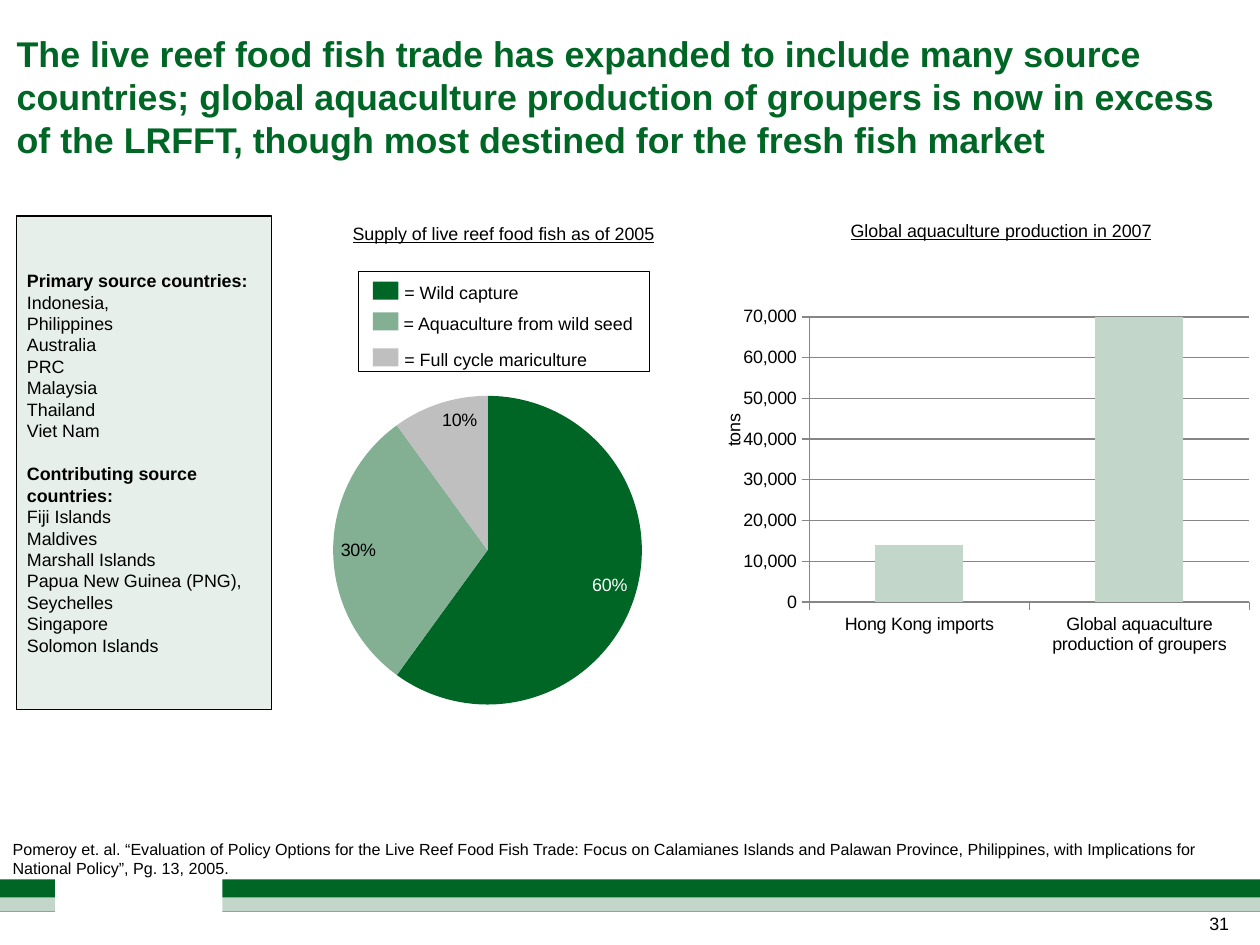
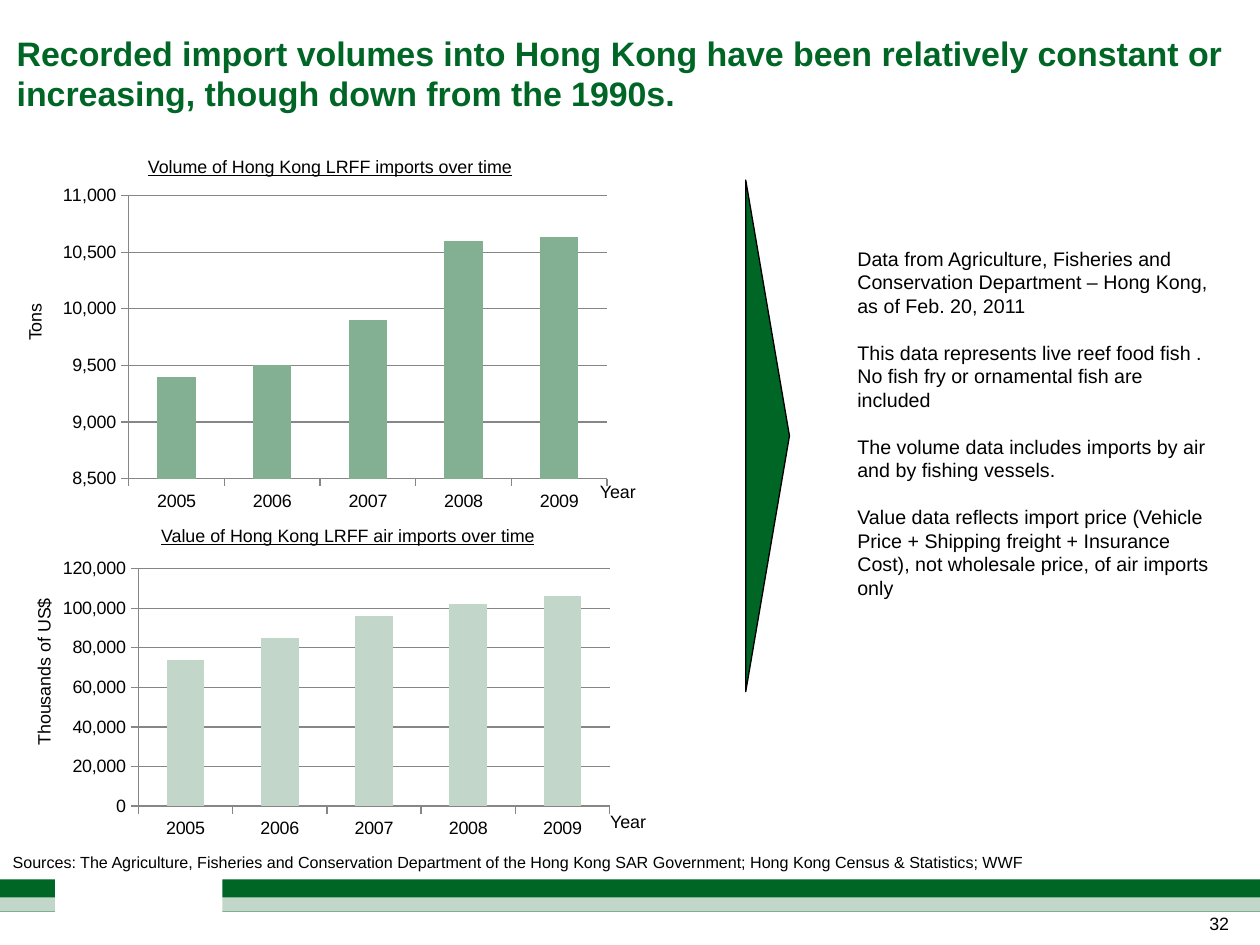
from dataclasses import dataclass

from lxml import etree
from pptx import Presentation
from pptx.chart.data import CategoryChartData
from pptx.dml.color import RGBColor
from pptx.enum.chart import XL_CHART_TYPE, XL_LABEL_POSITION, XL_TICK_MARK
from pptx.enum.shapes import MSO_SHAPE
from pptx.enum.text import MSO_ANCHOR, PP_ALIGN
from pptx.oxml.ns import qn
from pptx.util import Inches, Pt

COLUMN, PIE = XL_CHART_TYPE.COLUMN_CLUSTERED, XL_CHART_TYPE.PIE
INSIDE_END = XL_LABEL_POSITION.INSIDE_END
TICK_CROSS, TICK_NONE = XL_TICK_MARK.CROSS, XL_TICK_MARK.NONE
TICK_OUT = XL_TICK_MARK.OUTSIDE
RECTANGLE, TRIANGLE = MSO_SHAPE.RECTANGLE, MSO_SHAPE.ISOSCELES_TRIANGLE
LEFT, CENTER, RIGHT = PP_ALIGN.LEFT, PP_ALIGN.CENTER, PP_ALIGN.RIGHT
TOP, MIDDLE = MSO_ANCHOR.TOP, MSO_ANCHOR.MIDDLE

DARK_GREEN = RGBColor(0x00, 0x66, 0x25)
MID_GREEN = RGBColor(0x83, 0xAF, 0x93)
LIGHT_GREEN = RGBColor(0xC2, 0xD7, 0xCA)
PALE_GREEN = RGBColor(0xE6, 0xEF, 0xE9)
GRAY = RGBColor(0xBF, 0xBF, 0xBF)
AXIS_GRAY = RGBColor(0x86, 0x86, 0x86)
BLACK = RGBColor(0, 0, 0)
WHITE = RGBColor(0xFF, 0xFF, 0xFF)

FONT = "Arial"
SLIDE_WIDTH, SLIDE_HEIGHT = 9.8, 7.35


@dataclass(frozen=True)
class Box:
    """Place on the slide, in inches."""
    left: float
    top: float
    width: float
    height: float

    def lengths(self) -> tuple:
        return tuple(Inches(v) for v in (self.left, self.top, self.width, self.height))


@dataclass(frozen=True)
class Para:
    text: str
    bold: bool = False
    space_before: float = 0


@dataclass(frozen=True)
class SupplyShare:
    label: str
    share: float
    color: RGBColor
    label_color: RGBColor
    legend_top: float
    legend_width: float


@dataclass(frozen=True)
class ColumnChart:
    box: Box
    name: str
    values: dict[str, float]
    color: RGBColor
    minimum: float
    maximum: float
    step: float


@dataclass(frozen=True)
class Caption:
    text: str
    box: Box
    underline: bool = False
    rotation: float = 0


SHARES = (
    SupplyShare("Wild capture", 0.6, DARK_GREEN, WHITE, 2.14, 1.16),
    SupplyShare("Aquaculture from wild seed", 0.3, MID_GREEN, BLACK, 2.38, 2.04),
    SupplyShare("Full cycle mariculture", 0.1, GRAY, BLACK, 2.66, 1.69),
)
PRODUCTION = ColumnChart(
    Box(5.7, 2.33, 4.1, 2.82), "Production in 2007",
    {"Hong Kong imports": 14000, "Global aquaculture production of groupers": 70000},
    LIGHT_GREEN, 0, 70000, 10000)
IMPORT_VALUE = ColumnChart(
    Box(0.4, 4.3, 4.43, 2.27), "Import value",
    {"2005": 74000, "2006": 85000, "2007": 96000, "2008": 102000, "2009": 106000},
    LIGHT_GREEN, 0, 120000, 20000)
IMPORT_VOLUME = ColumnChart(
    Box(0.4, 1.39, 4.41, 2.64), "Import volume",
    {"2005": 9400, "2006": 9500, "2007": 9900, "2008": 10600, "2009": 10630},
    MID_GREEN, 8500, 11000, 500)
SUPPLY_CAPTIONS = (
    Caption("Supply of live reef food fish as of 2005", Box(2.23, 1.68, 3.37, 0.27), True),
    Caption("Global aquaculture production in 2007", Box(5.98, 1.66, 3.61, 0.27), True),
    Caption("tons", Box(4.78, 3.21, 1.85, 0.27), rotation=270),
)
IMPORT_CAPTIONS = (
    Caption("Tons", Box(-0.73, 2.37, 2, 0.27), rotation=270),
    Caption("Volume of Hong Kong LRFF imports over time", Box(0.52, 1.16, 4.09, 0.27), True),
    Caption("Year", Box(4.4, 3.69, 0.81, 0.27)),
    Caption("Thousands of US$", Box(-0.54, 5.09, 1.76, 0.27), rotation=270),
    Caption("Year", Box(4.47, 6.26, 0.83, 0.27)),
    Caption("Value of Hong Kong LRFF air imports over time", Box(0.61, 4.03, 4.19, 0.27), True),
)
PRIMARY = ("Indonesia,", "Philippines", "Australia", "PRC", "Malaysia", "Thailand", "Viet Nam")
CONTRIBUTING = ("Fiji Islands", "Maldives", "Marshall Islands",
                "Papua New Guinea (PNG), Seychelles", "Singapore", "Solomon Islands")
DATA_NOTES = (
    "Data from Agriculture, Fisheries and Conservation Department – Hong Kong, as of Feb. 20, 2011",
    "This data represents live reef food fish . No fish fry or ornamental fish are included",
    "The volume data includes imports by air and by fishing vessels.",
    "Value data reflects import price (Vehicle Price + Shipping freight + Insurance Cost), "
    "not wholesale price, of air imports only",
)


def write_text(shape, paras, *, size=10, color=BLACK, underline=False, align=LEFT,
               anchor=TOP, inset=None, wrap=True) -> None:
    frame = shape.text_frame
    frame.word_wrap = wrap
    frame.vertical_anchor = anchor
    if inset is not None:
        frame.margin_left = frame.margin_right = Inches(inset)
        frame.margin_top = frame.margin_bottom = Inches(inset)
    for index, para in enumerate(paras):
        paragraph = frame.paragraphs[0] if index == 0 else frame.add_paragraph()
        paragraph.alignment = align
        if para.space_before:
            paragraph.space_before = Pt(para.space_before)
        run = paragraph.add_run()
        run.text = para.text
        run.font.name = FONT
        run.font.size = Pt(size)
        run.font.bold = para.bold
        run.font.underline = underline
        run.font.color.rgb = color


def add_text(slide, box: Box, *paras: Para, rotation: float = 0, **text_format) -> None:
    text_box = slide.shapes.add_textbox(*box.lengths())
    text_box.rotation = rotation
    write_text(text_box, paras, **text_format)


def add_panel(slide, box: Box, fill: RGBColor, *, outlined=False, kind=RECTANGLE, rotation=0):
    panel = slide.shapes.add_shape(kind, *box.lengths())
    panel.shadow.inherit = False
    panel.rotation = rotation
    panel.fill.solid()
    panel.fill.fore_color.rgb = fill
    if outlined:
        panel.line.color.rgb = BLACK
        panel.line.width = Pt(0.75)
    else:
        panel.line.fill.background()
    return panel


def add_captions(slide, captions: tuple[Caption, ...]) -> None:
    for caption in captions:
        add_text(slide, caption.box, Para(caption.text), rotation=caption.rotation,
                 underline=caption.underline, align=CENTER)


def start_slide(deck, number: int, title: str, title_size: float, source: str,
                source_top: float):
    """Add a slide with the shared bands, title, source line and page number."""
    slide = deck.slides.add_slide(deck.slide_layouts[6])
    add_panel(slide, Box(0, 6.84, SLIDE_WIDTH, 0.25), DARK_GREEN)
    add_panel(slide, Box(0, 6.98, SLIDE_WIDTH, 0.11), LIGHT_GREEN)
    add_panel(slide, Box(0.43, 6.76, 1.3, 0.57), WHITE)
    add_text(slide, Box(0.13, 0.25, 9.43, 1.01), Para(title, bold=True),
             size=title_size, color=DARK_GREEN, inset=0)
    add_text(slide, Box(0, source_top, SLIDE_WIDTH, 0.25), Para(source), size=9)
    add_text(slide, Box(9.39, 7.1, 0.17, 0.17), Para(str(number)),
             align=RIGHT, inset=0, wrap=False)
    return slide


def add_chart(slide, kind, box: Box, name: str, values: dict[str, float], number_format: str):
    data = CategoryChartData(number_format=number_format)
    data.categories = list(values)
    data.add_series(name, list(values.values()))
    chart = slide.shapes.add_chart(kind, *box.lengths(), data).chart
    chart.has_title = chart.has_legend = False
    chart.font.name = FONT
    chart.font.size = Pt(10)
    chart.font.color.rgb = BLACK
    return chart


def add_columns(slide, column: ColumnChart) -> None:
    chart = add_chart(slide, COLUMN, column.box, column.name, column.values, "#,##0")
    plot = chart.plots[0]
    plot.gap_width = 150
    plot.vary_by_categories = False
    bars = plot.series[0].format.fill
    bars.solid()
    bars.fore_color.rgb = column.color
    scale = chart.value_axis
    scale.minimum_scale, scale.maximum_scale = column.minimum, column.maximum
    scale.major_unit = column.step
    scale.has_major_gridlines = True
    scale.tick_labels.number_format = "#,##0"
    scale.tick_labels.number_format_is_linked = False
    for axis in (scale, chart.category_axis):
        axis.major_tick_mark, axis.minor_tick_mark = TICK_OUT, TICK_NONE
        axis.format.line.color.rgb = AXIS_GRAY
        axis.format.line.width = Pt(0.75)
    scale.major_gridlines.format.line.color.rgb = AXIS_GRAY
    scale.major_gridlines.format.line.width = Pt(0.75)


def set_inner_layout(chart, **fractions: float) -> None:
    """Fix the inner plot area as fractions of the chart's size."""
    plot_area = chart.plots[0]._element.getparent()
    for old in plot_area.findall(qn("c:layout")):
        plot_area.remove(old)
    layout = etree.Element(qn("c:layout"))
    manual = etree.SubElement(layout, qn("c:manualLayout"))
    settings = {"layoutTarget": "inner", "xMode": "edge", "yMode": "edge", **fractions}
    for tag, value in settings.items():
        etree.SubElement(manual, qn(f"c:{tag}")).set("val", str(value))
    plot_area.insert(0, layout)


def add_supply_pie(slide) -> None:
    shares = {share.label: share.share for share in SHARES}
    chart = add_chart(slide, PIE, Box(2.51, 3.04, 4.07, 2.48), "Supply", shares, "0%")
    set_inner_layout(chart, x=0.02, y=0.01, w=0.59, h=0.98)
    series = chart.plots[0].series[0]
    labels = series.data_labels
    labels.show_value = True
    labels.number_format, labels.number_format_is_linked = "0%", False
    labels.position = INSIDE_END
    for index, share in enumerate(SHARES):
        point = series.points[index]
        point.format.fill.solid()
        point.format.fill.fore_color.rgb = share.color
        if share.label_color != BLACK:
            label = point.data_label
            label.font.color.rgb = share.label_color
            label.font.size = Pt(10)
            label.font.name = FONT
            label.position = INSIDE_END


def add_supply_legend(slide) -> None:
    add_panel(slide, Box(2.79, 2.11, 2.26, 0.78), WHITE, outlined=True)
    for share in SHARES:
        add_panel(slide, Box(2.9, share.legend_top + 0.05, 0.2, 0.14), share.color)
        add_text(slide, Box(3.01, share.legend_top, share.legend_width, 0.25),
                 Para(f"= {share.label}"), align=CENTER)


def build_supply_slide(deck) -> None:
    slide = start_slide(
        deck, 31,
        "The live reef food fish trade has expanded to include many source countries; global "
        "aquaculture production of groupers is now in excess of the LRFFT, though most destined "
        "for the fresh fish market", 20,
        "Pomeroy et. al. “Evaluation of Policy Options for the Live Reef Food Fish Trade: Focus "
        "on Calamianes Islands and Palawan Province, Philippines, with Implications for National "
        "Policy”, Pg. 13, 2005.", 6.48)
    countries = add_panel(slide, Box(0.13, 1.68, 1.98, 3.84), PALE_GREEN, outlined=True)
    write_text(countries, (
        Para("Primary source countries:", bold=True), *map(Para, PRIMARY),
        Para("Contributing source countries:", bold=True, space_before=12),
        *map(Para, CONTRIBUTING)), anchor=MIDDLE, inset=0.08)
    add_supply_pie(slide)
    add_supply_legend(slide)
    add_columns(slide, PRODUCTION)
    add_captions(slide, SUPPLY_CAPTIONS)


def build_imports_slide(deck) -> None:
    slide = start_slide(
        deck, 32,
        "Recorded import volumes into Hong Kong have been relatively constant or increasing, "
        "though down from the 1990s.", 19,
        "Sources: The Agriculture, Fisheries and Conservation Department of the Hong Kong SAR "
        "Government; Hong Kong Census & Statistics; WWF", 6.58)
    add_columns(slide, IMPORT_VALUE)
    add_columns(slide, IMPORT_VOLUME)
    add_panel(slide, Box(3.98, 3.22, 3.98, 0.34), DARK_GREEN,
              outlined=True, kind=TRIANGLE, rotation=90)
    notes = [Para(note, space_before=13 if index else 0) for index, note in enumerate(DATA_NOTES)]
    add_text(slide, Box(6.57, 1.87, 3, 3.06), *notes, size=11)
    add_captions(slide, IMPORT_CAPTIONS)


def main() -> None:
    deck = Presentation()
    deck.slide_width, deck.slide_height = Inches(SLIDE_WIDTH), Inches(SLIDE_HEIGHT)
    build_supply_slide(deck)
    build_imports_slide(deck)
    deck.save("out.pptx")


if __name__ == "__main__":
    main()
